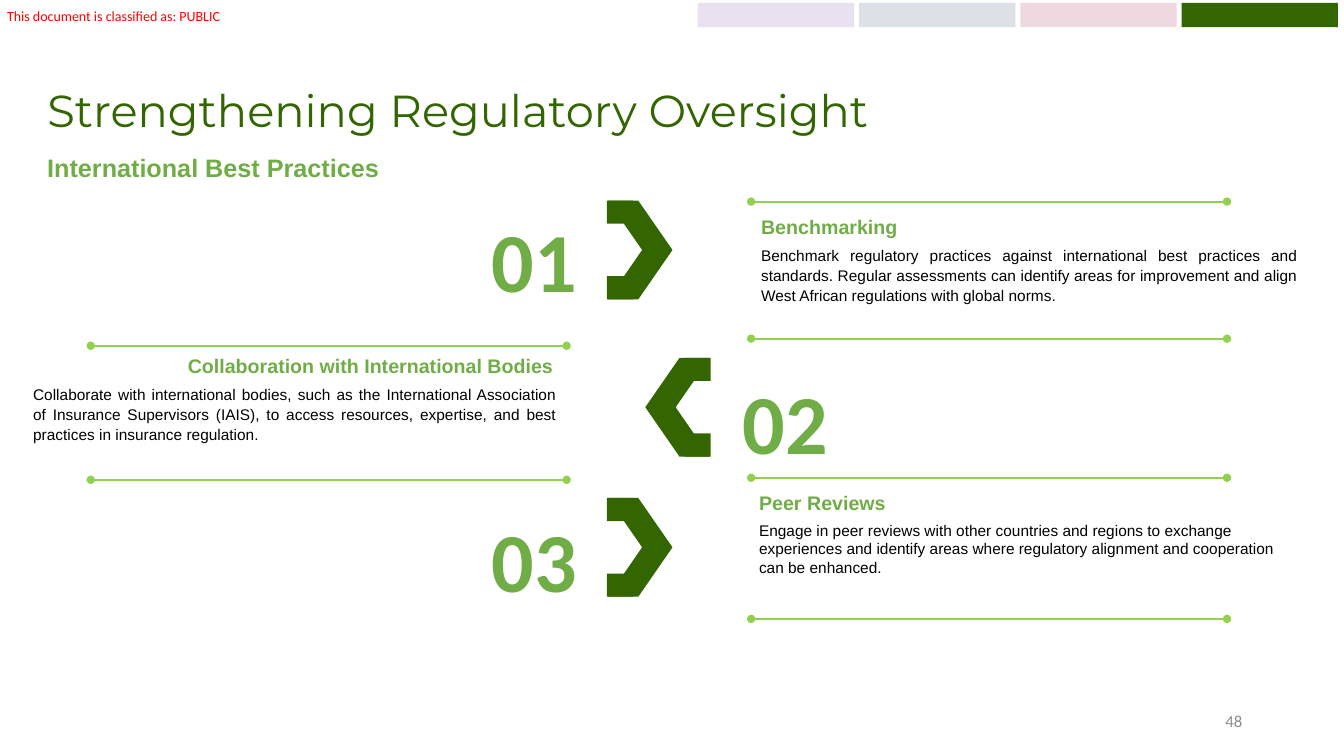
from lxml import etree
from pptx import Presentation
from pptx.dml.color import RGBColor
from pptx.enum.shapes import MSO_CONNECTOR, MSO_SHAPE
from pptx.enum.text import MSO_ANCHOR, MSO_AUTO_SIZE, PP_ALIGN
from pptx.oxml.ns import qn
from pptx.util import Pt

LEFT, CENTER, RIGHT, JUSTIFY = PP_ALIGN.LEFT, PP_ALIGN.CENTER, PP_ALIGN.RIGHT, PP_ALIGN.JUSTIFY
TOP, MIDDLE = MSO_ANCHOR.TOP, MSO_ANCHOR.MIDDLE
RECT, CHEVRON = MSO_SHAPE.RECTANGLE, MSO_SHAPE.CHEVRON
STRAIGHT = MSO_CONNECTOR.STRAIGHT
NO_FIT = MSO_AUTO_SIZE.NONE

SCALE = 9144
TITLE_ONLY = 5
COLORS = {
    "dark": "336600",
    "green": "70AD47",
    "lime": "92D050",
    "navy": "203864",
    "wine": "990033",
    "purple": "7030A0",
    "red": "FF0000",
    "gray": "8C8C8C",
    "black": "000000",
}


def px(*values):
    return [v * SCALE for v in values]


def rgb(name):
    return RGBColor.from_string(COLORS[name])


def format_text(tf, text, size, font, color, bold=False, align=LEFT,
                anchor=TOP, spacing=None, after=None):
    tf.word_wrap = True
    tf.auto_size = NO_FIT
    tf.vertical_anchor = anchor
    tf.text = text
    p = tf.paragraphs[0]
    p.alignment = align
    if spacing:
        p.line_spacing = spacing
    if after:
        p.space_after = Pt(after)
    r = p.runs[0]
    r.font.size = Pt(size)
    r.font.name = font
    r.font.bold = bold
    r.font.color.rgb = rgb(color)


def add_text(s, box, text, size, font, color, **options):
    tf = s.shapes.add_textbox(*px(*box)).text_frame
    format_text(tf, text, size, font, color, **options)
    return tf


def add_block(shapes, kind, box, color, alpha=None):
    sp = shapes.add_shape(kind, *px(*box))
    sp.shadow.inherit = False
    sp.fill.solid()
    sp.fill.fore_color.rgb = rgb(color)
    sp.line.fill.background()
    if alpha:
        clr = sp._element.spPr.find(qn("a:solidFill"))[0]
        etree.SubElement(clr, qn("a:alpha")).set("val", str(alpha * 1000))
    return sp


def add_arrow(s, x, y, points_left=False):
    group = s.shapes.add_group_shape()
    chevron = add_block(group.shapes, CHEVRON, (x, y, 64, 98), "dark")
    chevron.adjustments[0] = 0.53
    chevron.rotation = 180 if points_left else 0
    bar_x = x + 39 if points_left else x - 1
    for bar_y in (y, y + 75):
        add_block(group.shapes, RECT, (bar_x, bar_y, 26, 23), "dark")


def add_rule(s, x, y):
    line = s.shapes.add_connector(STRAIGHT, *px(x, y, x + 472, y))
    line.line.color.rgb = rgb("lime")
    line.line.width = Pt(1.5)
    sp_pr = line._element.spPr
    ln = sp_pr.find(qn("a:ln"))
    for end in ("a:headEnd", "a:tailEnd"):
        etree.SubElement(ln, qn(end)).set("type", "oval")
    etree.SubElement(sp_pr, qn("a:effectLst"))


def add_topic(s, head_box, body_x, body_w, head, body, head_align=LEFT, **body_options):
    add_text(s, (body_x, head_box[1] + 30, body_w, 69), body, 11, "Arial", "black",
             **body_options)
    add_text(s, head_box, head, 14, "Arial", "green", bold=True, align=head_align)


def main():
    prs = Presentation()
    prs.slide_width, prs.slide_height = px(1333, 750)
    s = prs.slides.add_slide(prs.slide_layouts[TITLE_ONLY])

    title = s.shapes.title
    title.left, title.top, title.width, title.height = px(37, 40, 1260, 145)
    format_text(title.text_frame, "Strengthening Regulatory Oversight", 32,
                "Montserrat", "dark", anchor=MIDDLE, spacing=0.9)

    tf = add_text(s, (7, 7, 240, 17), "This document is classified as: PUBLIC",
                  10, "Calibri", "red")
    tf.margin_left = tf.margin_top = tf.margin_right = tf.margin_bottom = 0
    add_text(s, (37, 144, 904, 40), "International Best Practices", 18, "Arial",
             "green", bold=True, spacing=1.07, after=8)

    for x, y, points_left in ((603, 199, False), (640, 355, True), (603, 494, False)):
        add_arrow(s, x, y, points_left)
    for number, x, y in (("01", 473, 202), ("02", 722, 363), ("03", 473, 500)):
        add_text(s, (x, y, 114, 111), number, 60, "Calibri", "green",
                 bold=True, align=CENTER)

    justified = {"align": JUSTIFY, "spacing": 1.07, "after": 8}
    add_topic(s, (745, 208, 548, 34), 745, 552, "Benchmarking",
              "Benchmark regulatory practices against international best practices and "
              "standards. Regular assessments can identify areas for improvement and "
              "align West African regulations with global norms.", **justified)
    add_topic(s, (743, 482, 459, 34), 743, 550, "Peer Reviews",
              "Engage in peer reviews with other countries and regions to exchange "
              "experiences and identify areas where regulatory alignment and "
              "cooperation can be enhanced.")
    add_topic(s, (105, 346, 454, 34), 23, 539, "Collaboration with International Bodies",
              "Collaborate with international bodies, such as the International "
              "Association of Insurance Supervisors (IAIS), to access resources, "
              "expertise, and best practices in insurance regulation.",
              head_align=RIGHT, **justified)

    for x, rows in ((745, (200, 336, 474, 614)), (90, (343, 476))):
        for y in rows:
            add_rule(s, x, y)

    add_text(s, (942, 695, 300, 40), "48", 12, "Calibri", "gray",
             align=RIGHT, anchor=MIDDLE)
    tabs = (("purple", 15), ("navy", 15), ("wine", 15), ("dark", None))
    for i, (color, alpha) in enumerate(tabs):
        add_block(s.shapes, RECT, (692 + 160 * i, 3, 155, 24), color, alpha)

    prs.save("out.pptx")


if __name__ == "__main__":
    main()
